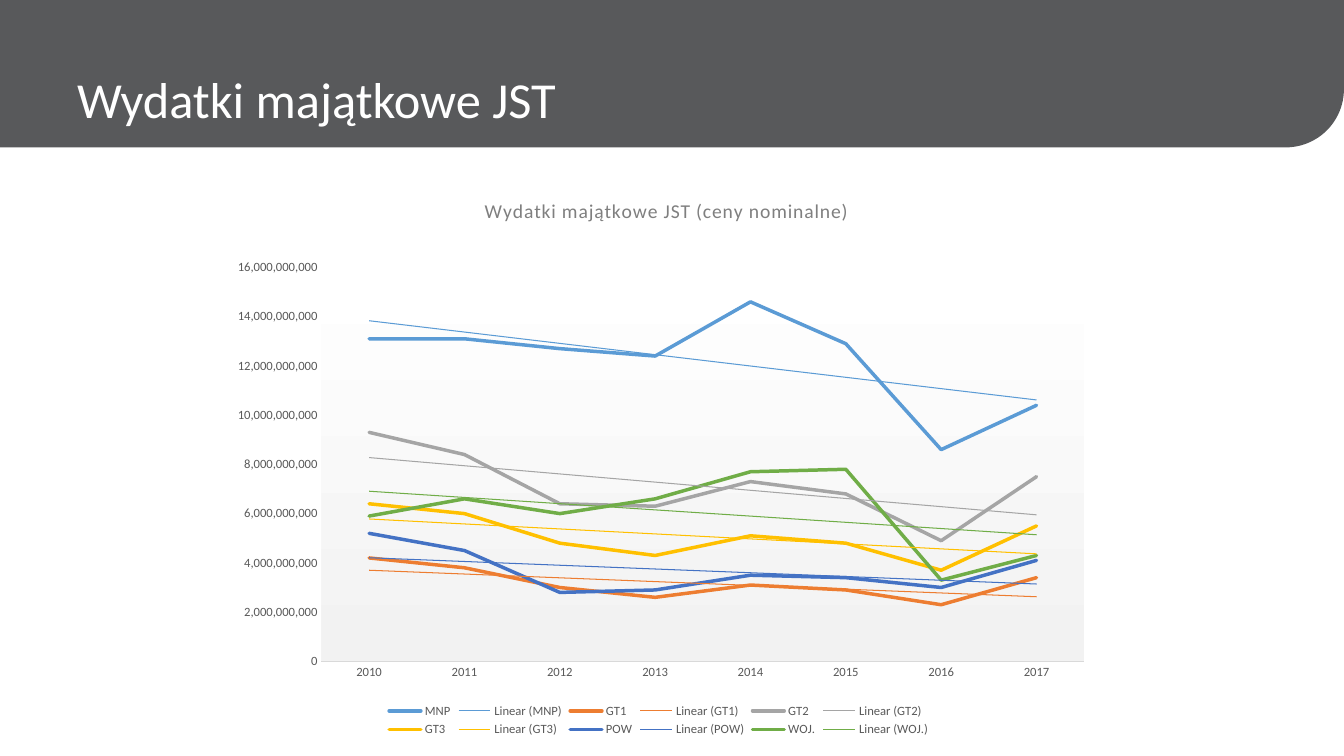
from dataclasses import dataclass

from pptx import Presentation
from pptx import oxml
from pptx import util as u
from pptx.chart import data as chart_data
from pptx.dml import color
from pptx.enum import chart as charts, shapes, text
from pptx.oxml import ns

WIDTH, HEIGHT = u.Inches(13.33), u.Inches(7.5)
BILLION = 10**9
YEARS = [str(year) for year in range(2010, 2018)]
SPENDING = {
    "MNP": ("5B9BD5", [13.1, 13.1, 12.7, 12.4, 14.6, 12.9, 8.6, 10.4]),
    "GT1": ("ED7D31", [4.2, 3.8, 3.0, 2.6, 3.1, 2.9, 2.3, 3.4]),
    "GT2": ("A5A5A5", [9.3, 8.4, 6.4, 6.3, 7.3, 6.8, 4.9, 7.5]),
    "GT3": ("FFC000", [6.4, 6.0, 4.8, 4.3, 5.1, 4.8, 3.7, 5.5]),
    "POW": ("4472C4", [5.2, 4.5, 2.8, 2.9, 3.5, 3.4, 3.0, 4.1]),
    "WOJ.": ("70AD47", [5.9, 6.6, 6.0, 6.6, 7.7, 7.8, 3.3, 4.3]),
}


@dataclass(frozen=True)
class Theme:
    font: str = "Calibri"
    banner: str = "58595B"
    paper: str = "FFFFFF"
    plot_end: str = "F2F2F2"
    axis_line: str = "D9D9D9"
    label: str = "595959"
    chart_title: str = "7F7F7F"
    title_size: float = 36
    chart_title_size: float = 14
    label_size: float = 9
    series_width: float = 2.5
    trend_width: float = 0.75


THEME = Theme()


def share(left, top, width, height):
    return [int(part * whole) for part, whole in
            zip((left, top, width, height), (WIDTH, HEIGHT) * 2)]


def apply(target, formats):
    for name, value in formats.items():
        setattr(target, name, value)


def style_font(font, size, rgb):
    apply(font, {"name": THEME.font, "size": u.Pt(size), "bold": False})
    font.color.rgb = color.RGBColor.from_string(rgb)


def xml(body):
    return oxml.parse_xml(body.replace(">", f" {ns.nsdecls('c', 'a')}>", 1))


def solid(rgb):
    return f'<a:solidFill><a:srgbClr val="{rgb}"/></a:solidFill>'


def layout(left, top, width=None, height=None):
    places = {"x": left, "y": top, "w": width, "h": height}
    places = {key: value for key, value in places.items() if value is not None}
    modes = "".join(f'<c:{key}Mode val="edge"/>' for key in "xy")
    values = "".join(f'<c:{key} val="{value}"/>' for key, value in places.items())
    target = '<c:layoutTarget val="inner"/>' if width else ""
    return xml(f"<c:layout><c:manualLayout>{target}{modes}{values}"
               "</c:manualLayout></c:layout>")


def set_layout(element, after, *places):
    for old in element.findall(ns.qn("c:layout")):
        element.remove(old)
    if after is None:
        element.insert(0, layout(*places))
    else:
        element.find(ns.qn(after)).addnext(layout(*places))


def add_banner(slide):
    banner = slide.shapes.add_shape(
        shapes.MSO_SHAPE.ROUND_1_RECTANGLE, *share(0, 0, 1, 0.195))
    banner.adjustments[0] = 0.395
    banner.shadow.inherit = False
    banner.fill.solid()
    banner.fill.fore_color.rgb = color.RGBColor.from_string(THEME.banner)
    banner.line.fill.background()
    banner._element.spPr.find(ns.qn("a:xfrm")).set("flipV", "1")


def add_title(slide, words):
    frame = slide.shapes.add_textbox(*share(0.05, 0.01, 0.88, 0.16)).text_frame
    apply(frame, {"word_wrap": True, "margin_bottom": 0,
                  "vertical_anchor": text.MSO_ANCHOR.BOTTOM})
    run = frame.paragraphs[0].add_run()
    run.text = words
    style_font(run.font, THEME.title_size, THEME.paper)


def style_chart_title(chart, words):
    chart.has_title = True
    run = chart.chart_title.text_frame.paragraphs[0].add_run()
    run.text = words
    style_font(run.font, THEME.chart_title_size, THEME.chart_title)
    run.font._element.set("spc", "50")
    set_layout(chart.chart_title._element, "c:tx", 0.3, 0.035)


def style_axes(chart):
    for axis in (chart.category_axis, chart.value_axis):
        apply(axis, {"has_major_gridlines": False,
                     "major_tick_mark": charts.XL_TICK_MARK.NONE,
                     "minor_tick_mark": charts.XL_TICK_MARK.NONE})
        style_font(axis.tick_labels.font, THEME.label_size, THEME.label)
    line = chart.category_axis.format.line
    line.color.rgb = color.RGBColor.from_string(THEME.axis_line)
    line.width = u.Pt(0.75)
    apply(chart.value_axis, {"minimum_scale": 0, "maximum_scale": 16 * BILLION,
                             "major_unit": 2 * BILLION})
    apply(chart.value_axis.tick_labels,
          {"number_format": "#,##0", "number_format_is_linked": False})
    chart.value_axis.format.line.fill.background()


def style_series(series, rgb):
    series.smooth = False
    line = series.format.line
    line.color.rgb = color.RGBColor.from_string(rgb)
    line.width = u.Pt(THEME.series_width)
    element = series._element
    element.find(f"{ns.qn('c:spPr')}/{ns.qn('a:ln')}").set("cap", "rnd")
    element.find(ns.qn("c:cat")).addprevious(xml(
        f'<c:trendline><c:spPr><a:ln w="{u.Pt(THEME.trend_width)}">{solid(rgb)}'
        '</a:ln></c:spPr><c:trendlineType val="linear"/>'
        '<c:dispRSqr val="0"/><c:dispEq val="0"/></c:trendline>'))


def style_backgrounds(chart):
    space = chart._chartSpace
    space.find(ns.qn("c:chart")).addnext(xml(
        f"<c:spPr>{solid(THEME.paper)}<a:ln><a:noFill/></a:ln></c:spPr>"))
    plot_area = space.find(f".//{ns.qn('c:plotArea')}")
    set_layout(plot_area, None, 0.12, 0.165, 0.86, 0.695)
    stops = "".join(
        f'<a:gs pos="{position}"><a:srgbClr val="{rgb}"/></a:gs>'
        for position, rgb in ((0, THEME.paper), (100000, THEME.plot_end)))
    plot_area.append(xml(f"<c:spPr><a:gradFill><a:gsLst>{stops}</a:gsLst>"
                         '<a:lin ang="5400000" scaled="0"/></a:gradFill></c:spPr>'))


def add_spending_chart(slide, words):
    values = chart_data.CategoryChartData(number_format="#,##0")
    values.categories = YEARS
    for name, (_, billions) in SPENDING.items():
        values.add_series(name, [round(value * BILLION) for value in billions])
    chart = slide.shapes.add_chart(
        charts.XL_CHART_TYPE.LINE, *share(0.16, 0.23, 0.66, 0.75), values).chart
    style_font(chart.font, THEME.label_size, THEME.label)
    style_chart_title(chart, words)
    style_axes(chart)
    chart.plots[0].vary_by_categories = False
    for series in chart.plots[0].series:
        style_series(series, SPENDING[series.name][0])
    chart.has_legend = True
    apply(chart.legend, {"position": charts.XL_LEGEND_POSITION.BOTTOM,
                         "include_in_layout": False})
    style_font(chart.legend.font, THEME.label_size, THEME.label)
    style_backgrounds(chart)


def main():
    presentation = Presentation()
    apply(presentation, {"slide_width": WIDTH, "slide_height": HEIGHT})
    slide = presentation.slides.add_slide(presentation.slide_layouts[6])
    add_banner(slide)
    add_title(slide, "Wydatki majątkowe JST")
    add_spending_chart(slide, "Wydatki majątkowe JST (ceny nominalne)")
    presentation.save("out.pptx")


if __name__ == "__main__":
    main()
